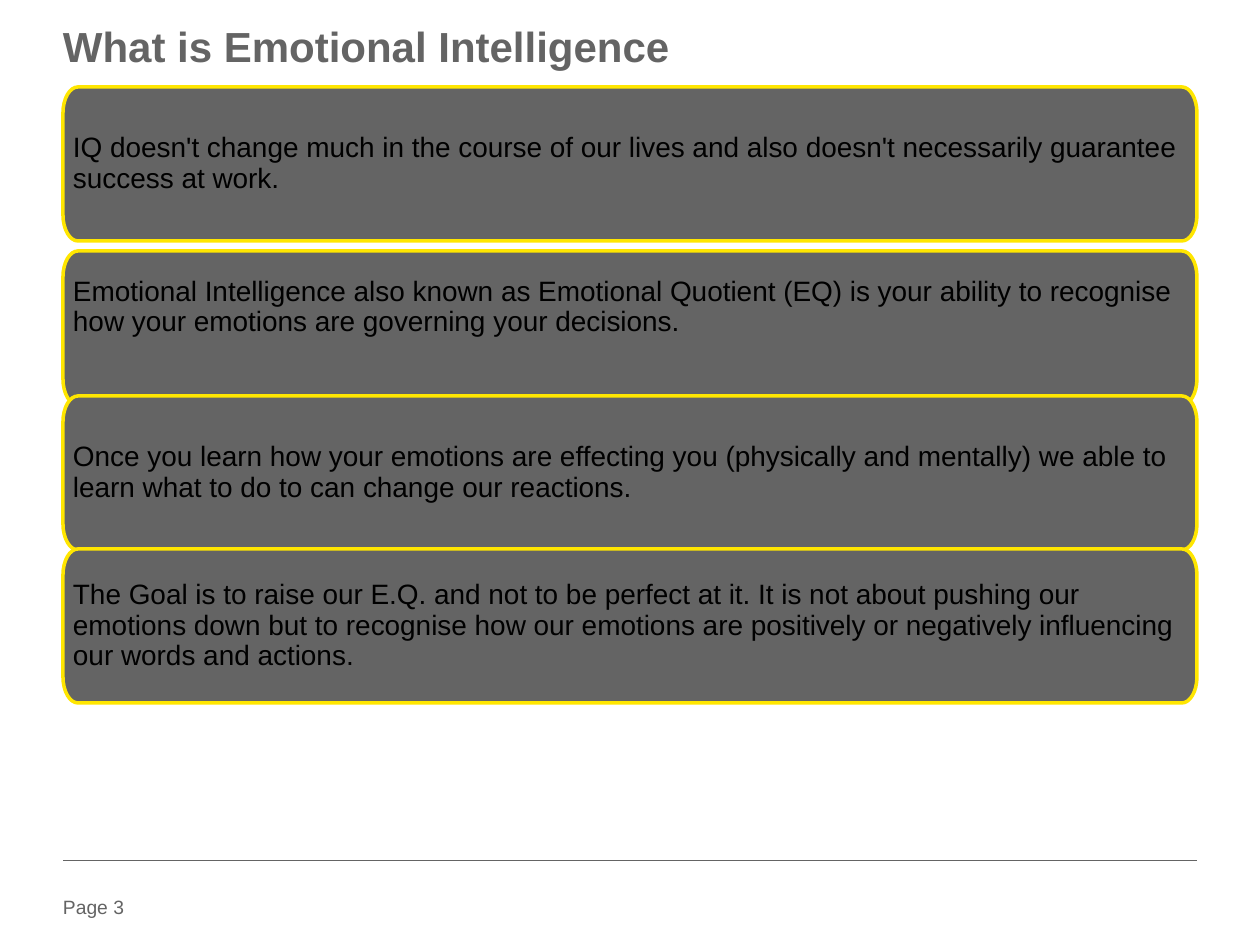
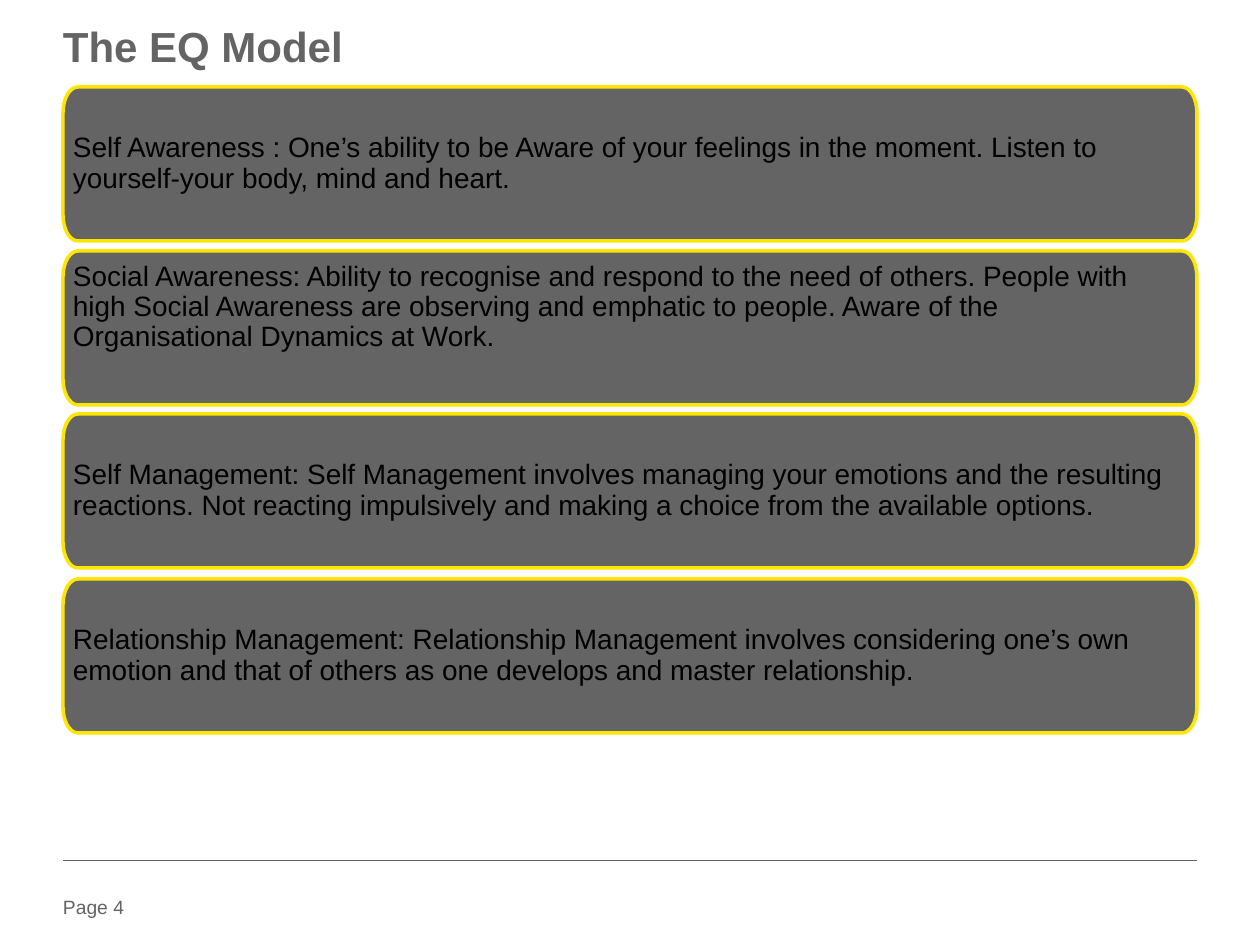
from lxml import etree
from pptx import Presentation
from pptx.dml.color import RGBColor
from pptx.enum.shapes import MSO_CONNECTOR
from pptx.enum.text import MSO_ANCHOR, PP_ALIGN
from pptx.oxml.ns import qn
from pptx.util import Emu, Pt

TOP, MIDDLE = MSO_ANCHOR.TOP, MSO_ANCHOR.MIDDLE
LEFT = PP_ALIGN.LEFT
STRAIGHT = MSO_CONNECTOR.STRAIGHT

GREY = RGBColor(0x64, 0x64, 0x64)
YELLOW = RGBColor(0xFF, 0xE6, 0x00)
BLACK = RGBColor(0x00, 0x00, 0x00)
FONT = "Arial"

PX_PER_INCH = 126
SLIDE_SIZE = (1260, 945)
MARGIN = 63
CONTENT_WIDTH = SLIDE_SIZE[0] - 2 * MARGIN
PANEL_HEIGHT = 154
PANEL_INSET = 10
RIGHT_INSET = 12
RAISED_INSET = 51
CORNER_X, CORNER_Y = 15, 26
ARC_PULL = 0.55

SLIDES = [
    (3, "What is Emotional Intelligence", [
        (87, PANEL_INSET, "IQ doesn't change much in the course of our lives and also "
         "doesn't necessarily guarantee success at work."),
        (251, RAISED_INSET, "Emotional Intelligence also known as Emotional Quotient (EQ) "
         "is your ability to recognise how your emotions are governing your decisions."),
        (396, PANEL_INSET, "Once you learn how your emotions are effecting you (physically "
         "and mentally) we able to learn what to do to can change our reactions."),
        (549, PANEL_INSET, "The Goal is to raise our E.Q. and not to be perfect at it. "
         "It is not about pushing our emotions down but to recognise how our emotions "
         "are positively or negatively influencing our words and actions."),
    ]),
    (4, "The EQ Model", [
        (87, PANEL_INSET, "Self Awareness : One’s ability to be Aware of your feelings "
         "in the moment. Listen to yourself-your body, mind and heart."),
        (251, RAISED_INSET, "Social Awareness: Ability to recognise and respond to the need "
         "of others. People with high Social Awareness are observing and emphatic to "
         "people. Aware of the Organisational Dynamics at Work."),
        (414, PANEL_INSET, "Self Management: Self Management involves managing your emotions "
         "and the resulting reactions. Not reacting impulsively and making a choice from "
         "the available options."),
        (579, PANEL_INSET, "Relationship Management: Relationship Management involves "
         "considering one’s own emotion and that of others as one develops and master "
         "relationship."),
    ]),
]


def px(length):
    return Emu(round(length * 914400 / PX_PER_INCH))


def write(frame, text, size, color, bold=False, anchor=TOP, spacing=1.0, insets=(0, 0, 0, 0)):
    frame.word_wrap = True
    frame.vertical_anchor = anchor
    (frame.margin_left, frame.margin_top,
     frame.margin_right, frame.margin_bottom) = map(px, insets)
    paragraph = frame.paragraphs[0]
    paragraph.alignment = LEFT
    paragraph.line_spacing = spacing
    run = paragraph.add_run()
    run.text = text
    run.font.name = FONT
    run.font.size = Pt(size)
    run.font.bold = bold
    run.font.color.rgb = color


def add_rule(slide, left, top, width, color, weight):
    rule = slide.shapes.add_connector(STRAIGHT, px(left), px(top), px(left + width), px(top))
    rule.line.color.rgb = color
    rule.line.width = Pt(weight)
    etree.SubElement(rule.element.spPr, qn("a:effectLst"))


def add_header(slide, box, text):
    left, top, width, height = box
    title_height = 47
    add_rule(slide, left, top + height, width, YELLOW, 1.5)
    title = slide.shapes.add_textbox(px(left), px(top), px(width), px(title_height))
    write(title.text_frame, text, 24, GREY, bold=True, spacing=0.85)


def add_footer(slide, box, page):
    left, top, width, height = box
    label_height = 28
    add_rule(slide, left, top, width, GREY, 0.25)
    label = slide.shapes.add_textbox(
        px(left), px(top + height - label_height), px(100), px(label_height))
    write(label.text_frame, f"Page {page}", 11, GREY)


def round_corners(panel):
    path = panel.element.spPr.find(".//" + qn("a:path"))
    corners = [(int(p.get("x")), int(p.get("y"))) for p in path.iter(qn("a:pt"))]
    for index, line in enumerate(path.findall(qn("a:lnTo"))):
        if index % 2:
            continue
        start, end = corners[index], corners[index + 1]
        tip = (start[0], end[1]) if index % 4 == 0 else (end[0], start[1])
        curve = etree.Element(qn("a:cubicBezTo"))
        for base, pull in ((start, ARC_PULL), (end, ARC_PULL), (end, 0)):
            x, y = (round(b + pull * (t - b)) for b, t in zip(base, tip))
            etree.SubElement(curve, qn("a:pt"), x=str(x), y=str(y))
        path.replace(line, curve)


def add_panel(slide, box, text, bottom_inset):
    left, top, width, height = box
    right, bottom = left + width, top + height
    outline = [
        (left, top + CORNER_Y), (left + CORNER_X, top),
        (right - CORNER_X, top), (right, top + CORNER_Y),
        (right, bottom - CORNER_Y), (right - CORNER_X, bottom),
        (left + CORNER_X, bottom), (left, bottom - CORNER_Y),
    ]
    start, *rest = [(px(x), px(y)) for x, y in outline]
    builder = slide.shapes.build_freeform(*start)
    builder.add_line_segments(rest, close=True)
    panel = builder.convert_to_shape()
    round_corners(panel)
    panel.shadow.inherit = False
    panel.fill.solid()
    panel.fill.fore_color.rgb = GREY
    panel.line.color.rgb = YELLOW
    panel.line.width = Pt(2)
    write(panel.text_frame, text, 16, BLACK, anchor=MIDDLE, spacing=0.9,
          insets=(PANEL_INSET, PANEL_INSET, RIGHT_INSET, bottom_inset))


def add_panel_slide(deck, page, title, panels):
    slide = deck.slides.add_slide(deck.slide_layouts[6])
    add_footer(slide, (MARGIN, 860, CONTENT_WIDTH, 63), page)
    add_header(slide, (MARGIN, 28, CONTENT_WIDTH, 116), title)
    for top, bottom_inset, text in panels:
        add_panel(slide, (MARGIN, top, CONTENT_WIDTH, PANEL_HEIGHT), text, bottom_inset)


def main():
    deck = Presentation()
    deck.slide_width, deck.slide_height = map(px, SLIDE_SIZE)
    for page, title, panels in SLIDES:
        add_panel_slide(deck, page, title, panels)
    deck.save("out.pptx")


if __name__ == "__main__":
    main()
